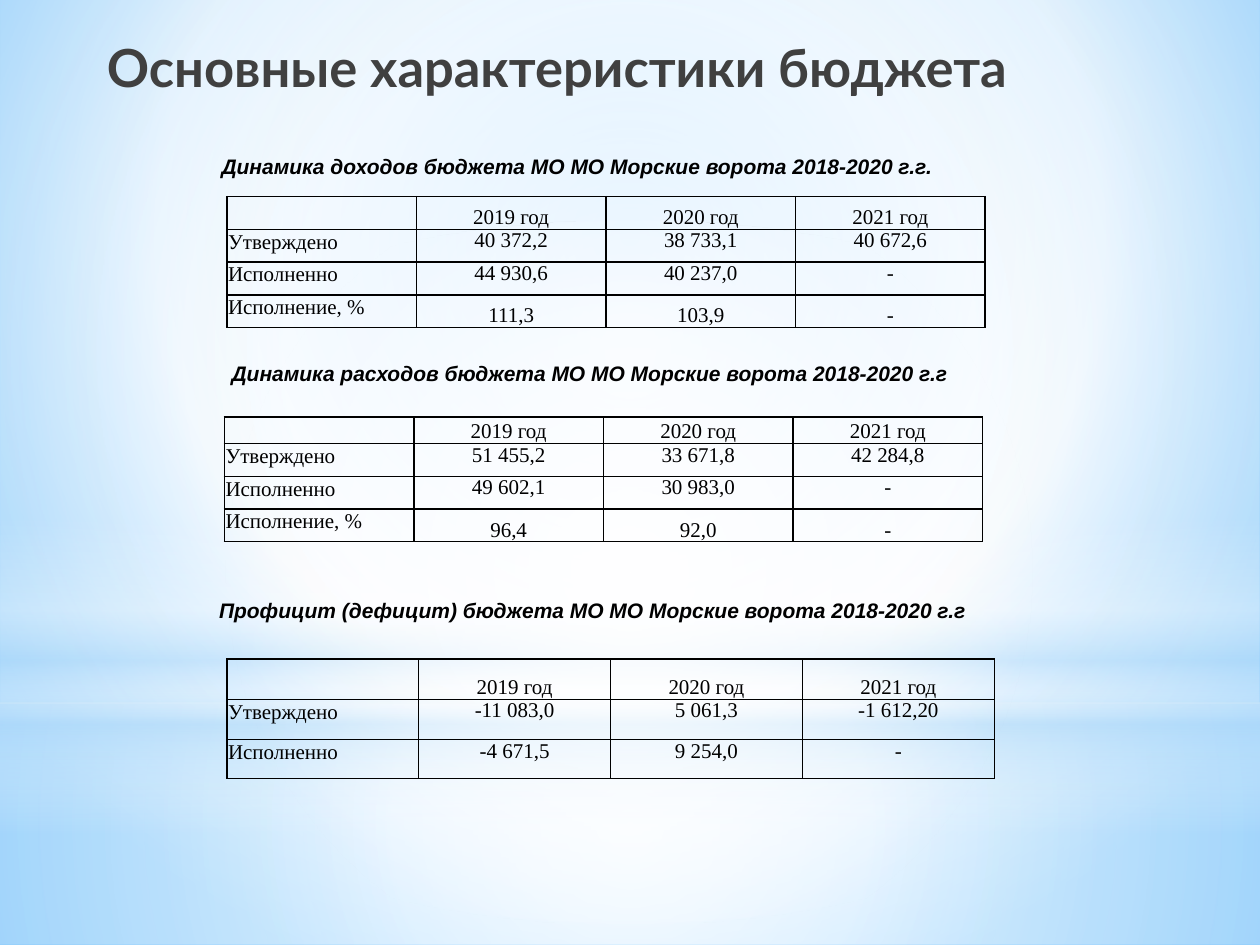
import pptx
import pptx.util
import pptx.dml.color
import pptx.enum.shapes
import pptx.enum.text
import pptx.oxml
import pptx.oxml.ns
from lxml import etree

Inches, Pt = pptx.util.Inches, pptx.util.Pt
RGB = pptx.dml.color.RGBColor
SHAPE = pptx.enum.shapes.MSO_SHAPE
ANCHOR, ALIGN = pptx.enum.text.MSO_ANCHOR, pptx.enum.text.PP_ALIGN
qn = pptx.oxml.ns.qn

# Content
C = {"text": "000000", "title": "404040", "white": "FFFFFF", "pale": "B4DCFA",
     "sky": "9ED5FF", "blue": "5BB9FF"}
TITLE = "Основные характеристики бюджета"
HEADER = ["", "2019 год", "2020 год", "2021 год"]
PERCENT = "Исполнение, %"

# heading, heading box (left, top, width), first-line indent,
# table left, top, column width, row heights, rows
SECTIONS = [
    ("Динамика доходов бюджета МО МО Морские ворота 2018-2020 г.г.",
     (1.17, 1.17, 7.03), 0.49, (1.8, 1.56), 1.505, [0.26] * 4,
     [["Утверждено", "40 372,2", "38 733,1", "40 672,6"],
      ["Исполненно", "44 930,6", "40 237,0", "-"],
      [PERCENT, "111,3", "103,9", "-"]]),
    ("Динамика расходов бюджета МО МО Морские ворота 2018-2020 г.г",
     (1.25, 2.81, 6.8), 0.49, (1.78, 3.31), 1.505, [0.21] + [0.26] * 3,
     [["Утверждено", "51 455,2", "33 671,8", "42 284,8"],
      ["Исполненно", "49 602,1", "30 983,0", "-"],
      [PERCENT, "96,4", "92,0", "-"]]),
    ("Профицит (дефицит) бюджета МО МО Морские ворота 2018-2020 г.г",
     (1.64, 4.69, 6.64), 0, (1.8, 5.23), 1.523, [0.32, 0.32, 0.31],
     [["Утверждено", "-11 083,0", "5 061,3", "-1 612,20"],
      ["Исполненно", "-4 671,5", "9 254,0", "-"]]),
]

# Gradient stops: position, colour, opacity (percent)
CENTRE = (50, 50, 50, 50)
BACKGROUND = [(0, "sky", 100), (60, "white", 100), (100, "blue", 100)]
GLOWS = [
    (SHAPE.RECTANGLE, (0, 5.58, 10, 1.92), CENTRE,
     [(0, "white", 91), (37, "white", 76), (100, "pale", 79)]),
    (SHAPE.RECTANGLE, (0, 0, 10, 5.58), CENTRE,
     [(0, "white", 89), (48, "white", 62), (100, "pale", 79)]),
    (SHAPE.RECTANGLE, (0, 4.12, 10, 2.5), None,
     [(0, "white", 0), (29, "white", 30), (45, "pale", 40),
      (55, "white", 26), (65, "pale", 60), (100, "white", 0)]),
    (SHAPE.OVAL, (0, 1.75, 10, 5.58), CENTRE,
     [(0, "white", 100), (56, "white", 0)]),
]


def set_gradient(fill, parent, stops, focus):
    """Replace the solid fill of parent; focus None means top to bottom."""
    fill.solid()
    grad = etree.Element(qn("a:gradFill"), rotWithShape="1")
    gs_list = etree.SubElement(grad, qn("a:gsLst"))
    for pos, colour, opacity in stops:
        gs = etree.SubElement(gs_list, qn("a:gs"), pos=str(pos * 1000))
        clr = etree.SubElement(gs, qn("a:srgbClr"), val=C[colour])
        if opacity < 100:
            etree.SubElement(clr, qn("a:alpha"), val=str(opacity * 1000))
    if focus:
        radial = etree.SubElement(grad, qn("a:path"), path="circle")
        sides = {side: str(v * 1000) for side, v in zip("ltrb", focus)}
        etree.SubElement(radial, qn("a:fillToRect"), **sides)
    else:
        etree.SubElement(grad, qn("a:lin"), ang="5400000", scaled="0")
    parent.replace(parent.find(qn("a:solidFill")), grad)


def add_run(p, text, font, size, colour="text", bold=False, italic=False):
    r = p.add_run()
    r.text = text
    r.font.name, r.font.size = font, Pt(size)
    r.font.bold, r.font.italic = bold, italic
    r.font.color.rgb = RGB.from_string(C[colour])


def add_text(s, box, text, indent=0, anchor=ANCHOR.TOP, **style):
    tf = s.shapes.add_textbox(*map(Inches, box)).text_frame
    tf.word_wrap = True
    tf.vertical_anchor = anchor
    p = tf.paragraphs[0]
    if indent:
        p._p.get_or_add_pPr().set("indent", str(Inches(indent)))
    add_run(p, text, **style)


def set_borders(cell):
    tc_pr = cell._tc.get_or_add_tcPr()
    for i, side in enumerate(("lnL", "lnR", "lnT", "lnB")):
        ln = etree.Element(qn("a:" + side), w=str(Pt(1)))
        solid = etree.SubElement(ln, qn("a:solidFill"))
        etree.SubElement(solid, qn("a:srgbClr"), val=C["text"])
        tc_pr.insert(i, ln)


def fill_cell(cell, text, is_label, at_bottom):
    cell.fill.background()
    set_borders(cell)
    side = 0.01 if is_label else 0.07
    cell.margin_left = cell.margin_right = Inches(side)
    cell.margin_top = Inches(0.01 if is_label else 0)
    cell.margin_bottom = 0
    cell.vertical_anchor = ANCHOR.BOTTOM if at_bottom else ANCHOR.TOP
    p = cell.text_frame.paragraphs[0]
    p.alignment = ALIGN.LEFT if is_label else ALIGN.CENTER
    if text:
        add_run(p, text, "Times New Roman", 12)
    else:
        etree.SubElement(p._p, qn("a:endParaRPr"), sz="1200")


def add_budget_table(s, at, col_width, heights, rows):
    rows = [HEADER] + rows
    n = len(HEADER)
    frame = s.shapes.add_table(len(rows), n, *map(
        Inches, (*at, col_width * n, sum(heights))))
    table = frame.table
    table.first_row = table.horz_banding = False
    for col in table.columns:
        col.width = Inches(col_width)
    for i, (row, height) in enumerate(zip(rows, heights)):
        table.rows[i].height = Inches(height)
        for j, text in enumerate(row):
            at_bottom = j > 0 and (i == 0 or row[0] == PERCENT)
            fill_cell(table.cell(i, j), text, j == 0, at_bottom)


prs = pptx.Presentation()
prs.slide_width, prs.slide_height = Inches(10), Inches(7.5)
s = prs.slides.add_slide(prs.slide_layouts[6])

# Background and soft light
fill = s.background.fill
fill.solid()
set_gradient(fill, s.element.xpath(".//p:bgPr")[0], BACKGROUND, (20, 10, 20, 60))
for kind, box, focus, stops in GLOWS:
    sp = s.shapes.add_shape(kind, *map(Inches, box))
    sp.shadow.inherit = False
    sp.line.fill.background()
    set_gradient(sp.fill, sp._element.spPr, stops, focus)

# Title
add_text(s, (0.75, 0.18, 8.65, 0.7), TITLE, anchor=ANCHOR.MIDDLE,
         font="Lato", size=30, colour="title", bold=True)

# Headings and tables
for heading, box, indent, at, col_width, heights, rows in SECTIONS:
    add_text(s, (*box, 0.3), heading, indent, font="Arial", size=12,
             bold=True, italic=True)
    add_budget_table(s, at, col_width, heights, rows)

prs.save("out.pptx")
